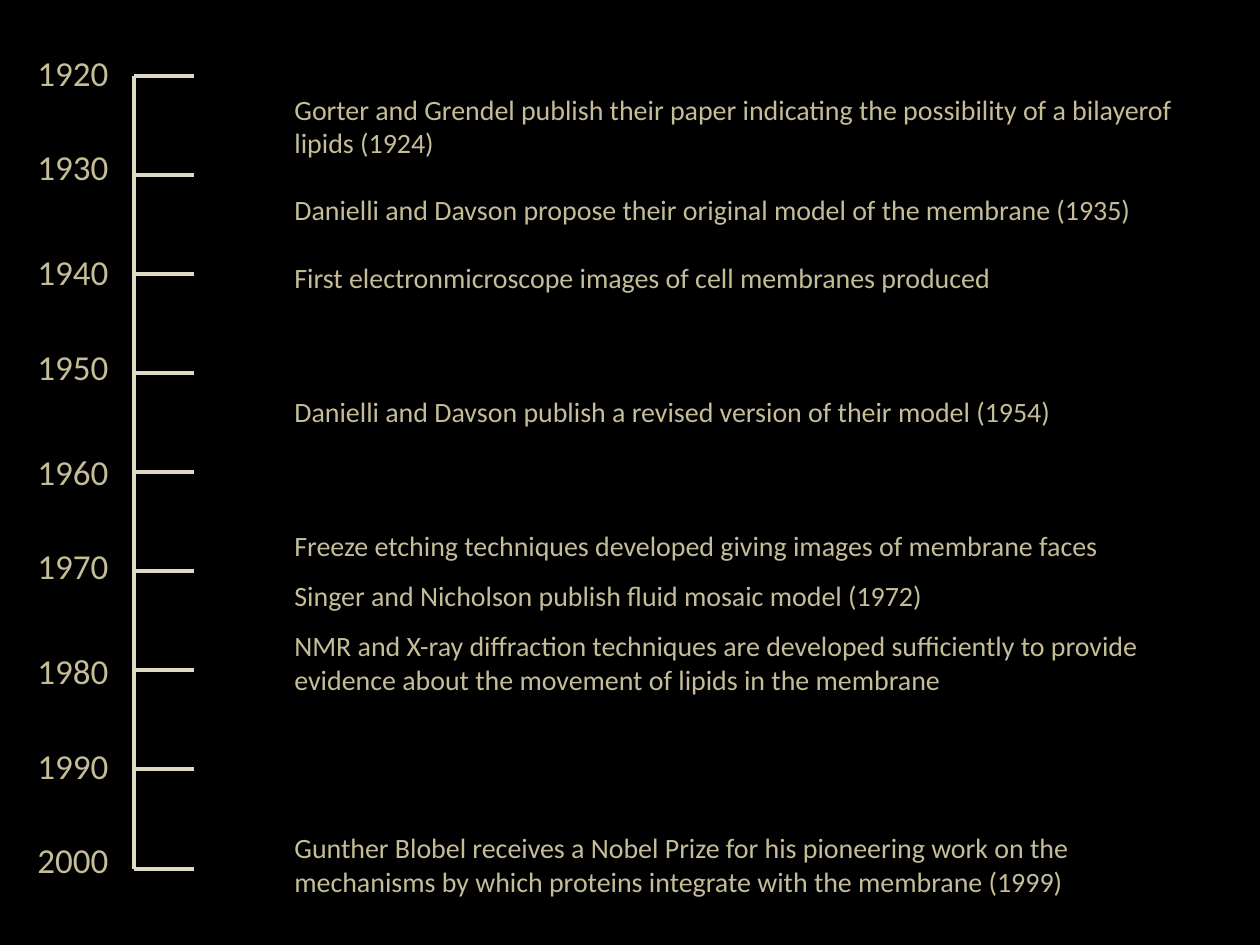
"""Build a timeline slide of cell membrane research from 1920 to 2000."""
from dataclasses import dataclass

from lxml import etree
from pptx import Presentation
from pptx.dml.color import RGBColor
from pptx.enum.shapes import MSO_CONNECTOR
from pptx.enum.text import MSO_AUTO_SIZE, PP_ALIGN
from pptx.oxml.ns import qn
from pptx.slide import Slide
from pptx.util import Pt

STRAIGHT = MSO_CONNECTOR.STRAIGHT
LEFT = PP_ALIGN.LEFT
NO_AUTOFIT = MSO_AUTO_SIZE.NONE
EMU_PER_PX = 914400 / 126

SPINE_X, TICK_END = 134, 194
SPINE_TOP, SPINE_BOTTOM = 76, 869
FIRST_YEAR, DECADE, DECADES = 1920, 10, 8
NARROW, WIDE = 30, 36
HALF_LINE, LINE = 9.4, 19.2


@dataclass(frozen=True)
class Theme:
    background: RGBColor = RGBColor(0x00, 0x00, 0x00)
    axis: RGBColor = RGBColor(0xDD, 0xD9, 0xC3)
    text: RGBColor = RGBColor(0xC4, 0xBD, 0x97)
    font: str = "Calibri"
    year_size: int = 20
    event_size: int = 16
    axis_width: int = 2


@dataclass(frozen=True)
class Box:
    left: int
    top: int
    width: int
    height: int


@dataclass(frozen=True)
class Entry:
    text: str
    gap: float = 0


THEME = Theme()
YEAR_COLUMN = Box(25, 45, 110, 851)
EVENT_COLUMN = Box(282, 86, 912, 827)
YEAR_GAPS = (0, NARROW, WIDE, NARROW, WIDE, NARROW, WIDE, NARROW, NARROW)
YEARS = [Entry(str(FIRST_YEAR + DECADE * index), gap) for index, gap in enumerate(YEAR_GAPS)]
EVENTS = [
    Entry("Gorter and Grendel publish their paper indicating the possibility of a bilayerof lipids (1924)"),
    Entry("Danielli and Davson propose their original model of the membrane (1935)", LINE),
    Entry("First electronmicroscope images of cell membranes produced", LINE),
    Entry("Danielli and Davson publish a revised version of their model (1954)", 3 * LINE),
    Entry("Freeze etching techniques developed giving images of membrane faces", 3 * LINE),
    Entry("Singer and Nicholson publish fluid mosaic model (1972)", HALF_LINE),
    Entry("NMR and X-ray diffraction techniques are developed sufficiently to provide "
          "evidence about the movement of lipids in the membrane", HALF_LINE),
    Entry("Gunther Blobel receives a Nobel Prize for his pioneering work on the "
          "mechanisms by which proteins integrate with the membrane (1999)", 4 * LINE),
]


def px(length: int) -> int:
    """Turn pixels into EMU."""
    return round(length * EMU_PER_PX)


def draw_line(slide: Slide, x1: int, y1: int, x2: int, y2: int) -> None:
    """Draw one flat stroke of the time axis."""
    stroke = slide.shapes.add_connector(STRAIGHT, px(x1), px(y1), px(x2), px(y2))
    stroke.line.color.rgb = THEME.axis
    stroke.line.width = Pt(THEME.axis_width)
    etree.SubElement(stroke._element.spPr, qn("a:effectLst"))


def draw_axis(slide: Slide) -> None:
    """Draw the spine with a tick for every decade."""
    draw_line(slide, SPINE_X, SPINE_TOP, SPINE_X, SPINE_BOTTOM)
    for index in range(DECADES + 1):
        y = SPINE_TOP + (SPINE_BOTTOM - SPINE_TOP) * index // DECADES
        draw_line(slide, SPINE_X, y, TICK_END, y)


def draw_column(slide: Slide, box: Box, entries: list[Entry], size: int) -> None:
    """Write entries down a column, each set off by its gap in points."""
    column = slide.shapes.add_textbox(px(box.left), px(box.top), px(box.width), px(box.height))
    frame = column.text_frame
    frame.word_wrap = True
    frame.auto_size = NO_AUTOFIT
    for index, entry in enumerate(entries):
        paragraph = frame.add_paragraph() if index else frame.paragraphs[0]
        paragraph.alignment = LEFT
        paragraph.space_before = Pt(entry.gap)
        run = paragraph.add_run()
        run.text = entry.text
        run.font.name = THEME.font
        run.font.size = Pt(size)
        run.font.color.rgb = THEME.text


def main() -> None:
    """Assemble and save the slide."""
    deck = Presentation()
    deck.slide_width, deck.slide_height = px(1260), px(945)
    slide = deck.slides.add_slide(deck.slide_layouts[6])
    slide.background.fill.solid()
    slide.background.fill.fore_color.rgb = THEME.background
    draw_axis(slide)
    draw_column(slide, EVENT_COLUMN, EVENTS, THEME.event_size)
    draw_column(slide, YEAR_COLUMN, YEARS, THEME.year_size)
    deck.save("out.pptx")


if __name__ == "__main__":
    main()
